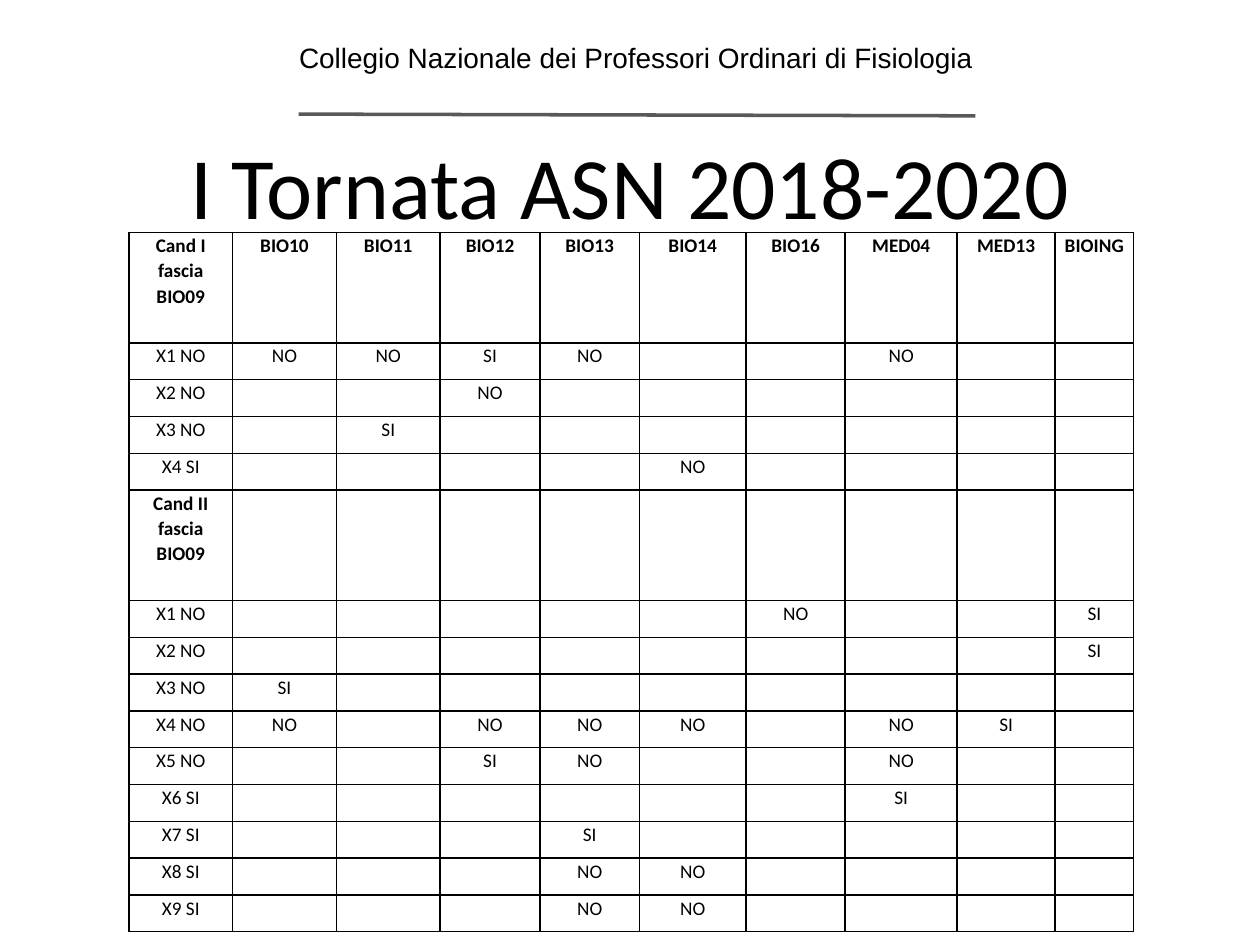
from dataclasses import dataclass, field

from lxml import etree
from pptx import Presentation
from pptx.dml.color import RGBColor
from pptx.enum.shapes import MSO_CONNECTOR
from pptx.enum.text import MSO_ANCHOR, PP_ALIGN
from pptx.oxml.ns import qn
from pptx.util import Pt

CENTER = PP_ALIGN.CENTER
TOP = MSO_ANCHOR.TOP
STRAIGHT = MSO_CONNECTOR.STRAIGHT

COLORS = {"text": "000000", "rule": "595959", "border": "000000"}
SECTORS = ["BIO10", "BIO11", "BIO12", "BIO13", "BIO14", "BIO16", "MED04", "MED13", "BIOING"]
COLUMN_WIDTHS = [59.2, 59.4, 59.2, 57.2, 56.7, 61.1, 56.6, 64, 56, 44.8]
HEADING_HEIGHT = 63.1
CANDIDATE_HEIGHT = 21.05


@dataclass
class Row:
    label: str
    results: dict[str, str] = field(default_factory=dict)
    heading: bool = False


ROWS = [
    Row("Cand I fascia\nBIO09", {sector: sector for sector in SECTORS}, heading=True),
    Row("X1 NO", {"BIO10": "NO", "BIO11": "NO", "BIO12": "SI", "BIO13": "NO", "MED04": "NO"}),
    Row("X2 NO", {"BIO12": "NO"}),
    Row("X3 NO", {"BIO11": "SI"}),
    Row("X4 SI", {"BIO14": "NO"}),
    Row("Cand II fascia BIO09", heading=True),
    Row("X1 NO", {"BIO16": "NO", "BIOING": "SI"}),
    Row("X2 NO", {"BIOING": "SI"}),
    Row("X3 NO", {"BIO10": "SI"}),
    Row("X4 NO", {"BIO10": "NO", "BIO12": "NO", "BIO13": "NO", "BIO14": "NO",
                  "MED04": "NO", "MED13": "SI"}),
    Row("X5 NO", {"BIO12": "SI", "BIO13": "NO", "MED04": "NO"}),
    Row("X6 SI", {"MED04": "SI"}),
    Row("X7 SI", {"BIO13": "SI"}),
    Row("X8 SI", {"BIO13": "NO", "BIO14": "NO"}),
    Row("X9 SI", {"BIO13": "NO", "BIO14": "NO"}),
]


def write_text(text_frame, text: str, *, size: float, font: str = "Calibri",
               bold: bool = False, line_spacing: float = 1.0) -> None:
    text_frame.word_wrap = True
    for index, line in enumerate(text.split("\n")):
        paragraph = text_frame.paragraphs[0] if index == 0 else text_frame.add_paragraph()
        paragraph.alignment = CENTER
        paragraph.line_spacing = line_spacing
        if not line:
            etree.SubElement(paragraph._p, qn("a:endParaRPr"), sz=str(int(size * 100)))
            continue
        run = paragraph.add_run()
        run.text = line
        run.font.name = font
        run.font.size = Pt(size)
        run.font.bold = bold
        run.font.color.rgb = RGBColor.from_string(COLORS["text"])


def set_margins(target, horizontal: float, vertical: float) -> None:
    target.margin_left = target.margin_right = Pt(horizontal)
    target.margin_top = target.margin_bottom = Pt(vertical)


def add_borders(cell, color: str, width: float) -> None:
    properties = cell._tc.get_or_add_tcPr()
    for side in ("lnL", "lnR", "lnT", "lnB"):
        line = etree.SubElement(properties, qn(f"a:{side}"), w=str(Pt(width)))
        fill = etree.SubElement(line, qn("a:solidFill"))
        etree.SubElement(fill, qn("a:srgbClr"), val=color)


def add_header(slide) -> None:
    box = slide.shapes.add_textbox(Pt(156.4), Pt(16.2), Pt(414), Pt(72))
    set_margins(box.text_frame, 7.2, 7.2)
    box.text_frame.vertical_anchor = TOP
    write_text(box.text_frame, "Collegio Nazionale dei Professori Ordinari di Fisiologia",
               size=16, font="Arial")
    rule = slide.shapes.add_connector(STRAIGHT, Pt(170.6), Pt(65.2), Pt(557.3), Pt(66.2))
    rule.line.color.rgb = RGBColor.from_string(COLORS["rule"])
    rule.line.width = Pt(2)
    etree.SubElement(rule._element.spPr, qn("a:effectLst"))


def add_title(slide) -> None:
    title = slide.shapes.title
    title.left, title.top, title.width, title.height = Pt(49.7), Pt(73.4), Pt(620.6), Pt(78.5)
    set_margins(title.text_frame, 7.2, 2)
    title.text_frame.vertical_anchor = TOP
    write_text(title.text_frame, "I Tornata ASN 2018-2020", size=50)


def add_results_table(slide, rows: list[Row]) -> None:
    heights = [HEADING_HEIGHT if row.heading else CANDIDATE_HEIGHT for row in rows]
    frame = slide.shapes.add_table(len(rows), len(COLUMN_WIDTHS), Pt(73.7), Pt(132.8),
                                   Pt(sum(COLUMN_WIDTHS)), Pt(sum(heights)))
    table = frame.table
    table.first_row = False
    table.horz_banding = False
    for column, width in zip(table.columns, COLUMN_WIDTHS):
        column.width = Pt(width)
    for table_row, row, height in zip(table.rows, rows, heights):
        table_row.height = Pt(height)
        texts = [row.label] + [row.results.get(sector, "") for sector in SECTORS]
        for cell, text in zip(table_row.cells, texts):
            set_margins(cell, 4.3, 0)
            add_borders(cell, COLORS["border"], 1)
            cell.fill.background()
            write_text(cell.text_frame, text, size=11, bold=row.heading, line_spacing=1.07)


def main() -> None:
    presentation = Presentation()
    presentation.slide_width, presentation.slide_height = Pt(720), Pt(540)
    slide = presentation.slides.add_slide(presentation.slide_layouts[5])
    add_header(slide)
    add_title(slide)
    add_results_table(slide, ROWS)
    presentation.save("out.pptx")


if __name__ == "__main__":
    main()
